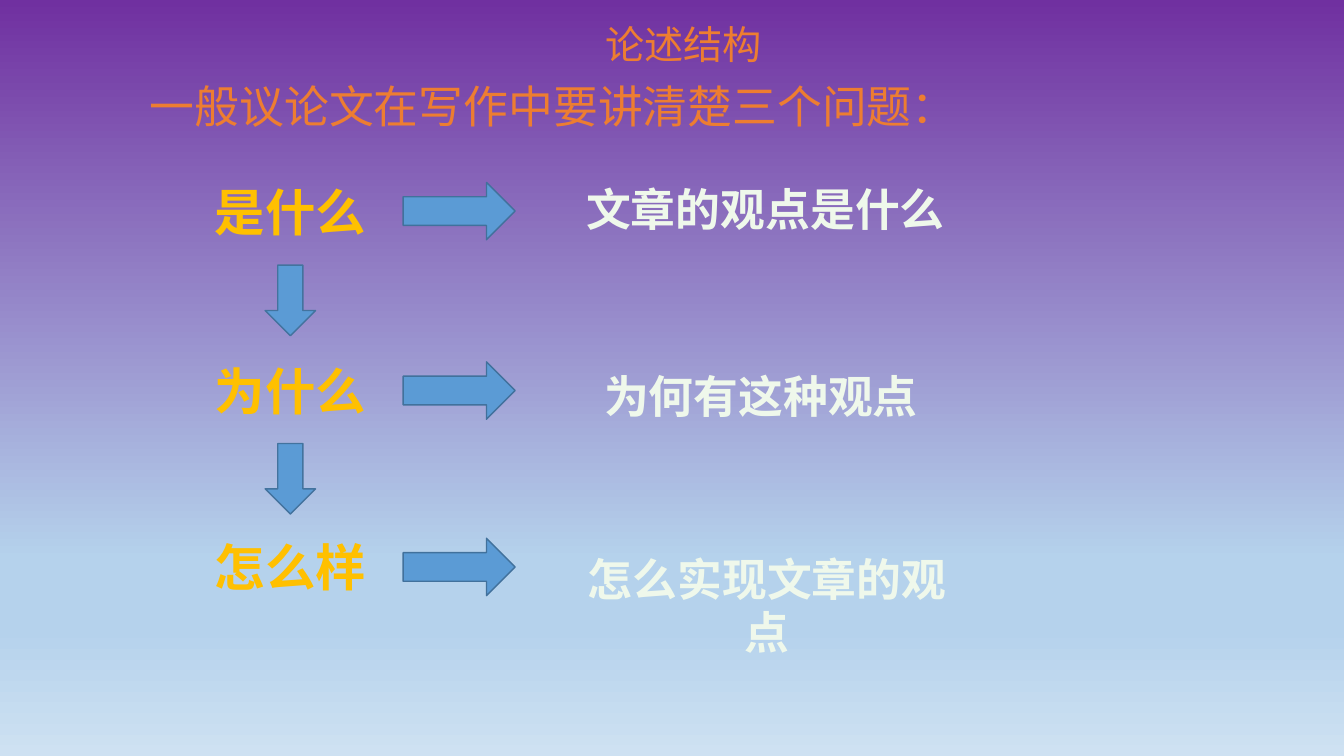
"""Build a slide on the three questions an argumentative essay answers."""
from copy import deepcopy
from dataclasses import dataclass

from lxml.etree import SubElement
from pptx import Presentation
from pptx.dml.color import RGBColor
from pptx.enum.shapes import MSO_SHAPE
from pptx.enum.text import MSO_AUTO_SIZE, PP_ALIGN
from pptx.oxml.ns import qn
from pptx.slide import Slide
from pptx.util import Pt

FONT = "Noto Sans CJK SC"
ORANGE, GOLD, PALE = "ED7D31", "FFC000", "EFF8EB"
BLUE, DOWN_EDGE, RIGHT_EDGE = "5B9BD5", "43739E", "41719C"
SKY = [(0, "7030A0"), (0.74, "B5D2EC"), (0.83, "B5D2EC"), (1, "CEE1F2")]


@dataclass(frozen=True)
class Box:
    left: float
    top: float
    width: float
    height: float


@dataclass(frozen=True)
class Label:
    text: str
    box: Box
    size: float
    color: str
    bold: bool = False
    wrap: bool = False


@dataclass(frozen=True)
class Step:
    question: str
    question_top: float
    arrow_top: float
    answer: str
    answer_box: Box
    wrap: bool = False


HEADINGS = [
    Label("论述结构", Box(360, 10.8, 256.3, 41), 28, ORANGE, wrap=True),
    Label("一般议论文在写作中要讲清楚三个问题：", Box(84.2, 52.6, 590.4, 46), 32, ORANGE),
]
STEPS = [
    Step("是什么", 126, 130.3, "文章的观点是什么", Box(410.4, 126, 272.9, 46)),
    Step("为什么", 253.4, 258.5, "为何有这种观点", Box(423.4, 260, 240.5, 46)),
    Step("怎么样", 379.4, 384.5, "怎么实现文章的观点", Box(398, 390.2, 300, 46), True),
]


def rgb(color: str) -> RGBColor:
    return RGBColor.from_string(color)


def paint_background(s: Slide) -> None:
    fill = s.background.fill
    fill.gradient()
    fill.gradient_angle = 270
    stops = next(s.element.iter(qn("a:gsLst")))
    while len(stops) < len(SKY):
        stops.append(deepcopy(stops[0]))
    for stop, (position, color) in zip(fill.gradient_stops, SKY):
        stop.position = position
        stop.color.rgb = rgb(color)


def add_label(s: Slide, label: Label) -> None:
    b = label.box
    sp = s.shapes.add_textbox(Pt(b.left), Pt(b.top), Pt(b.width), Pt(b.height))
    tf = sp.text_frame
    tf.word_wrap = label.wrap
    tf.auto_size = MSO_AUTO_SIZE.SHAPE_TO_FIT_TEXT
    p = tf.paragraphs[0]
    p.alignment = PP_ALIGN.CENTER
    r = p.add_run()
    r.text = label.text
    r.font.size = Pt(label.size)
    r.font.bold = label.bold
    r.font.color.rgb = rgb(label.color)
    r.font.name = FONT
    SubElement(r.font._element, qn("a:ea"), typeface=FONT)


def add_arrow(s: Slide, kind: MSO_SHAPE, b: Box, edge: str) -> None:
    sp = s.shapes.add_shape(kind, Pt(b.left), Pt(b.top), Pt(b.width), Pt(b.height))
    sp.shadow.inherit = False
    sp.fill.solid()
    sp.fill.fore_color.rgb = rgb(BLUE)
    sp.line.color.rgb = rgb(edge)
    sp.line.width = Pt(1)


def add_step(s: Slide, step: Step) -> None:
    question_box = Box(145.4, step.question_top, 123.8, 51)
    add_label(s, Label(step.question, question_box, 36, GOLD, True))
    add_arrow(s, MSO_SHAPE.RIGHT_ARROW, Box(288, step.arrow_top, 80, 41), RIGHT_EDGE)
    add_label(s, Label(step.answer, step.answer_box, 32, PALE, True, step.wrap))


def main() -> None:
    prs = Presentation()
    prs.slide_width, prs.slide_height = Pt(960), Pt(540)
    s = prs.slides.add_slide(prs.slide_layouts[6])
    paint_background(s)
    for heading in HEADINGS:
        add_label(s, heading)
    for step in STEPS:
        add_step(s, step)
    for step in STEPS[:-1]:
        down = Box(189.4, step.question_top + 63.4, 36, 50.4)
        add_arrow(s, MSO_SHAPE.DOWN_ARROW, down, DOWN_EDGE)
    prs.save("out.pptx")


if __name__ == "__main__":
    main()
